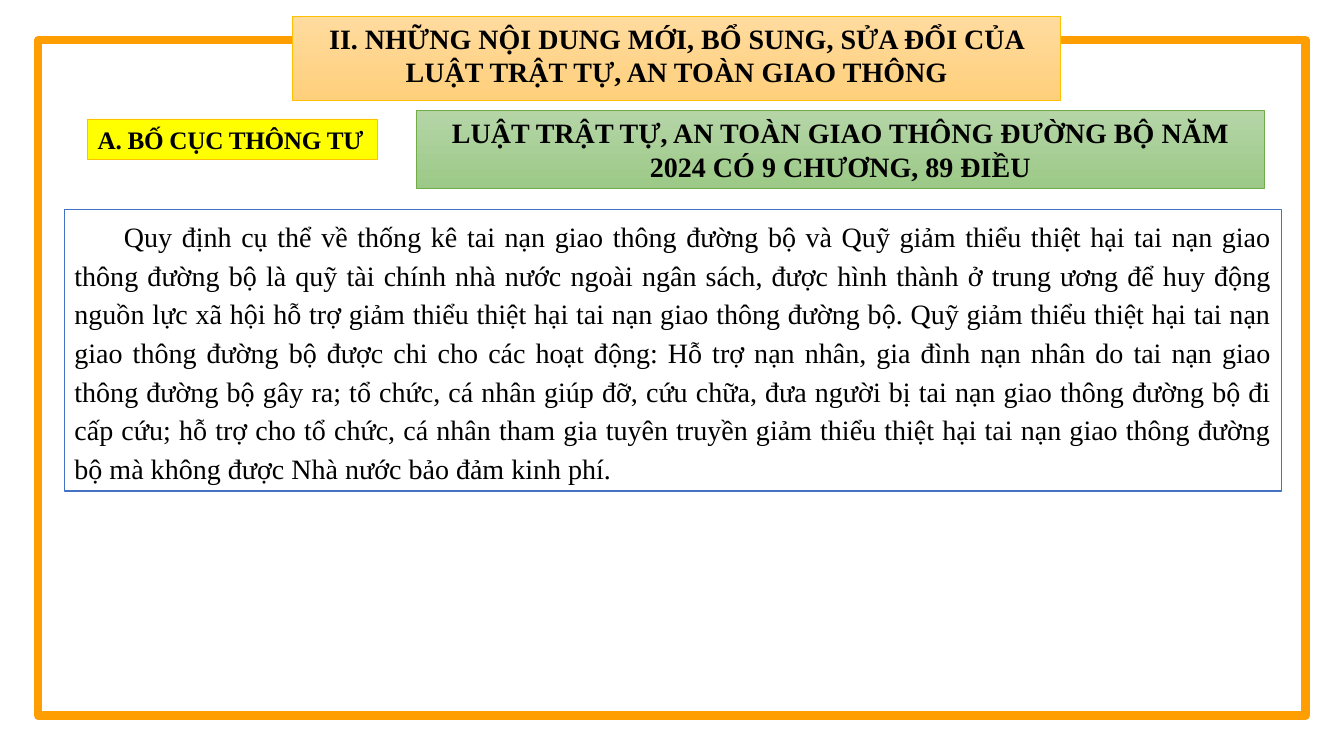
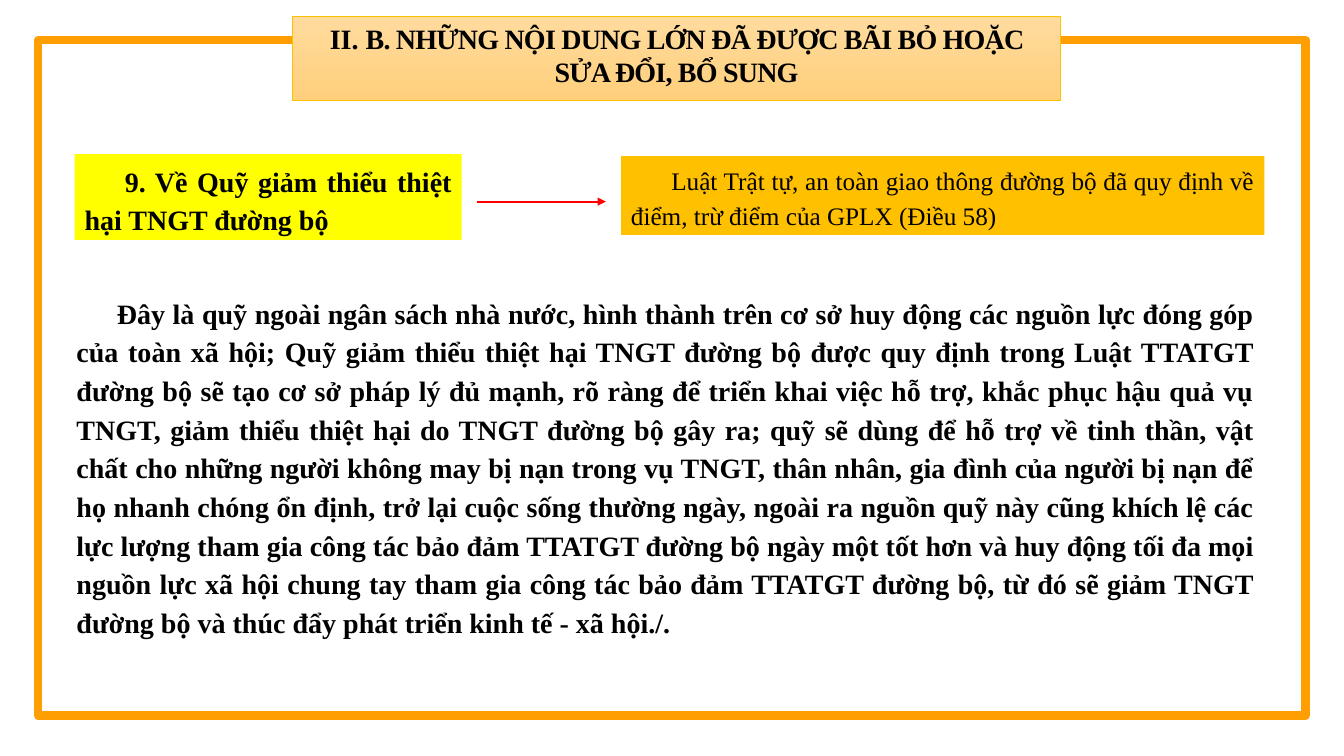
from pptx import Presentation
from pptx.dml.color import RGBColor
from pptx.enum.shapes import MSO_CONNECTOR, MSO_SHAPE
from pptx.enum.text import MSO_ANCHOR, MSO_AUTO_SIZE, PP_ALIGN
from pptx.oxml.ns import qn
from pptx.util import Inches, Pt
from lxml import etree

FONT = "Times New Roman"
BLACK, WHITE, YELLOW, AMBER = "000000", "FFFFFF", "FFFF00", "FFC000"
FRAME, BLUE, GREEN, RED = "FF9E00", "4472C4", "70AD47", "FF0000"
TITLE_FILL, GREEN_FILL = ("FFDB9E", "FFD07C"), ("B5D5A7", "9CC987")

TITLE_BOX = (2.9, 0.16, 7.62, 0.77)
FRAME_POINTS = [(4.54, 0.4), (0.38, 0.4), (0.38, 7.1),
                (12.95, 7.1), (12.95, 0.4), (8.82, 0.4)]

CENTER = dict(align=PP_ALIGN.CENTER)
BODY = dict(align=PP_ALIGN.JUSTIFY, indent=0.4, line_spacing=1.15, gap=4)

# Runs are (text, letter spacing in points)
SLIDES = [
    dict(
        title=[("II. NHỮNG NỘI DUNG MỚI, BỔ SUNG, SỬA ĐỔI CỦA LUẬT TRẬT TỰ, "
                "AN TOÀN GIAO THÔNG", 0)],
        boxes=[
            dict(at=(0.87, 1.18, 2.87, 0.4), fill=YELLOW, line=(AMBER, 0.5),
                 runs=[("A. BỐ CỤC THÔNG TƯ", -0.2)], size=18, bold=True),
            dict(at=(4.13, 1.1, 8.41, 0.77), fill=GREEN_FILL, line=(GREEN, 0.5),
                 runs=[("LUẬT TRẬT TỰ, AN TOÀN GIAO THÔNG ĐƯỜNG BỘ NĂM 2024 "
                        "CÓ 9 CHƯƠNG, 89 ĐIỀU", 0)],
                 bold=True, para=CENTER),
            dict(at=(0.64, 2.08, 12.07, 2.79), fill=WHITE, line=(BLUE, 1),
                 runs=[("Quy định cụ thể về thống kê tai nạn giao thông đường bộ "
                        "và Quỹ giảm thiểu thiệt hại tai nạn giao thông đường bộ "
                        "là quỹ tài chính nhà nước ngoài ngân sách, được hình "
                        "thành ở trung ương để huy động nguồn lực xã hội hỗ trợ "
                        "giảm thiểu thiệt hại tai nạn giao thông đường bộ. Quỹ "
                        "giảm thiểu thiệt hại tai nạn giao thông đường bộ được "
                        "chi cho các hoạt động: Hỗ trợ nạn nhân, gia đình nạn "
                        "nhân do tai nạn giao thông đường bộ gây ra; tổ chức, cá "
                        "nhân giúp đỡ, cứu chữa, đưa người bị tai nạn giao thông "
                        "đường bộ đi cấp cứu; hỗ trợ cho tổ chức, cá nhân tham "
                        "gia tuyên truyền giảm thiểu thiệt hại tai nạn giao thông "
                        "đường bộ mà không được Nhà nước bảo đảm kinh phí.", 0)],
                 para=dict(BODY, indent=0.49, gap=6)),
        ],
        arrows=[],
    ),
    dict(
        title=[("II. ", 0),
               ("B. NHỮNG NỘI DUNG LỚN ĐÃ ĐƯỢC BÃI BỎ HOẶC SỬA ĐỔI, BỔ SUNG",
                -0.6)],
        boxes=[
            dict(at=(0.74, 1.53, 3.84, 0.85), fill=YELLOW,
                 runs=[("9. Về Quỹ giảm thiểu thiệt hại TNGT đường bộ", 0)],
                 bold=True, para=BODY),
            dict(at=(6.16, 1.55, 6.38, 0.78), fill=AMBER,
                 runs=[("Luật Trật tự, an toàn giao thông đường bộ đã quy định "
                        "về điểm, trừ điểm của GPLX (Điều 58)", 0)],
                 size=18, para=BODY),
            dict(at=(0.66, 2.84, 11.88, 3.56),
                 runs=[("Đây là quỹ ngoài ngân sách nhà nước, hình thành trên cơ "
                        "sở huy động các nguồn lực đóng góp của toàn xã hội; Quỹ "
                        "giảm thiểu thiệt hại TNGT đường bộ được quy định trong "
                        "Luật TTATGT đường bộ sẽ tạo cơ sở pháp lý đủ mạnh, rõ "
                        "ràng để triển khai việc hỗ trợ, khắc phục hậu quả vụ "
                        "TNGT, giảm thiểu thiệt hại do TNGT đường bộ gây ra; quỹ "
                        "sẽ dùng để hỗ trợ về tinh thần, vật chất cho những người "
                        "không may bị nạn trong vụ TNGT, thân nhân, gia đình của "
                        "người bị nạn để họ nhanh chóng ổn định, trở lại cuộc "
                        "sống thường ngày, ngoài ra nguồn quỹ này cũng khích lệ "
                        "các lực lượng tham gia công tác bảo đảm TTATGT đường bộ "
                        "ngày một tốt hơn và huy động tối đa mọi nguồn lực xã hội "
                        "chung tay tham gia công tác bảo đảm TTATGT đường bộ, từ "
                        "đó sẽ giảm TNGT đường bộ và thúc đẩy phát triển kinh tế "
                        "- xã hội./.", 0)],
                 bold=True, para=BODY),
        ],
        arrows=[((4.73, 2), (6.01, 2))],
    ),
]


def rgb(color):
    return RGBColor.from_string(color)


def set_fill(sp, fill):
    """Fill with one colour, a top-to-bottom pair, or nothing."""
    if fill is None:
        sp.fill.background()
    elif isinstance(fill, tuple):
        sp.fill.gradient()
        sp.fill.gradient_angle = 270
        for stop, color in zip(sp.fill.gradient_stops, fill):
            stop.color.rgb = rgb(color)
    else:
        sp.fill.solid()
        sp.fill.fore_color.rgb = rgb(fill)


def set_line(sp, line):
    if line is None:
        sp.line.fill.background()
    else:
        color, width = line
        sp.line.color.rgb = rgb(color)
        sp.line.width = Pt(width)


def set_text(sp, runs, size, bold, align=PP_ALIGN.LEFT, indent=0,
             line_spacing=1.0, gap=0):
    tf = sp.text_frame
    tf.word_wrap = True
    tf.auto_size = MSO_AUTO_SIZE.SHAPE_TO_FIT_TEXT
    tf.vertical_anchor = MSO_ANCHOR.TOP
    p = tf.paragraphs[0]
    p.alignment = align
    p.line_spacing = line_spacing
    p.space_before = p.space_after = Pt(gap)
    if indent:
        pPr = p._p.get_or_add_pPr()
        pPr.set("marL", "0")
        pPr.set("indent", str(Inches(indent)))
    for text, spacing in runs:
        r = p.add_run()
        r.text = text
        r.font.name = FONT
        r.font.size = Pt(size)
        r.font.bold = bold
        r.font.color.rgb = rgb(BLACK)
        if spacing:
            r._r.get_or_add_rPr().set("spc", str(round(spacing * 100)))


def style_box(sp, runs, fill=None, line=None, size=20, bold=False, para=None):
    set_fill(sp, fill)
    set_line(sp, line)
    set_text(sp, runs, size, bold, **(para or {}))


def add_title(s, runs):
    sp = s.shapes.title
    sp.left, sp.top, sp.width, sp.height = map(Inches, TITLE_BOX)
    style_box(sp, runs, TITLE_FILL, (AMBER, 0.5), bold=True, para=CENTER)


def add_box(s, at, **style):
    sp = s.shapes.add_shape(MSO_SHAPE.RECTANGLE, *map(Inches, at))
    sp.shadow.inherit = False
    style_box(sp, **style)


def add_arrow(s, start, end):
    sp = s.shapes.add_connector(MSO_CONNECTOR.STRAIGHT,
                                *map(Inches, start + end))
    set_line(sp, (RED, 1.5))
    etree.SubElement(sp.line._get_or_add_ln(), qn("a:tailEnd"), type="triangle")
    etree.SubElement(sp._element.spPr, qn("a:effectLst"))


def move_frame_to_layout(s):
    """Draw the open frame and place it on the layout, behind every title."""
    points = [(Inches(x), Inches(y)) for x, y in FRAME_POINTS]
    builder = s.shapes.build_freeform(*points[0])
    builder.add_line_segments(points[1:], close=False)
    sp = builder.convert_to_shape()
    sp.shadow.inherit = False
    set_fill(sp, None)
    set_line(sp, (FRAME, 6))
    s.slide_layout.shapes._spTree.append(sp._element)


def main():
    prs = Presentation()
    prs.slide_width, prs.slide_height = Inches(13.33), Inches(7.5)
    title_only = prs.slide_layouts[5]
    for content in SLIDES:
        s = prs.slides.add_slide(title_only)
        add_title(s, content["title"])
        for box in content["boxes"]:
            add_box(s, **box)
        for start, end in content["arrows"]:
            add_arrow(s, start, end)
    move_frame_to_layout(prs.slides[0])
    prs.save("out.pptx")


if __name__ == "__main__":
    main()
